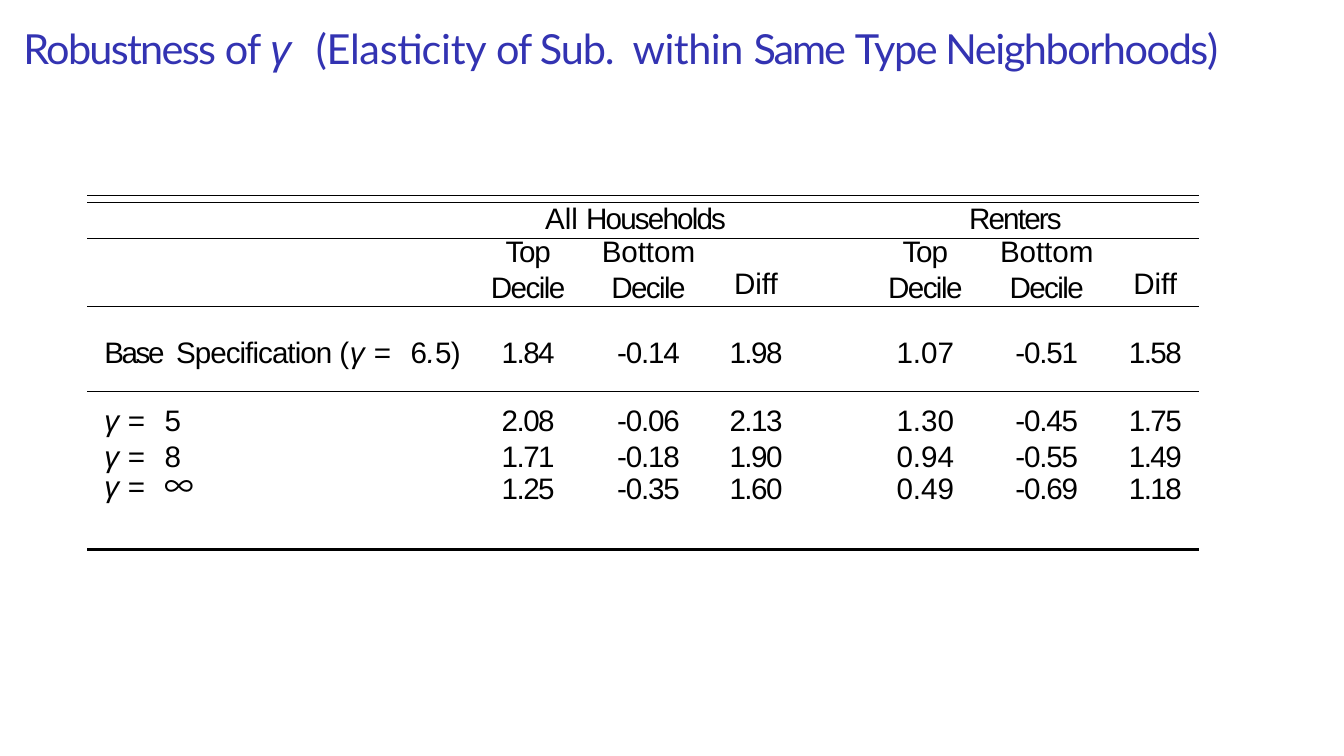
from lxml import etree
from pptx import Presentation
from pptx.dml.color import RGBColor
from pptx.enum.shapes import MSO_CONNECTOR
from pptx.enum.text import PP_ALIGN
from pptx.oxml.ns import qn
from pptx.util import Inches, Pt

STRAIGHT = MSO_CONNECTOR.STRAIGHT
CENTER, LEFT = PP_ALIGN.CENTER, PP_ALIGN.LEFT
BLACK = RGBColor(0, 0, 0)
TITLE_BLUE = RGBColor(0x33, 0x33, 0xB2)


def add_runs(paragraph, runs, size, color):
    for words, font_name, spacing, italic in runs:
        run = paragraph.add_run()
        run.text = words
        formats = {"name": font_name, "size": Pt(size), "italic": italic, "bold": False}
        for attribute, value in formats.items():
            setattr(run.font, attribute, value)
        run.font.color.rgb = color
        run.font._element.set("spc", str(round(spacing * 100)))


def add_heading(left, top, width, height, inset, runs, size, color):
    frame = slide.shapes.add_textbox(
        Inches(left), Inches(top), Inches(width), Inches(height)
    ).text_frame
    formats = {"margin_left": Inches(0.01), "margin_right": 0,
               "margin_top": Inches(inset), "margin_bottom": 0, "word_wrap": False}
    for attribute, value in formats.items():
        setattr(frame, attribute, value)
    add_runs(frame.paragraphs[0], runs, size, color)


deck = Presentation()
deck.slide_width, deck.slide_height = Inches(6.31), Inches(3.55)
slide = deck.slides.add_slide(deck.slide_layouts[6])

title = [
    ("Robustness ", "Lato", -0.6, False),
    ("of ", "Lato", -0.4, False),
    ("γ", "Arial", 0.2, True),
    (" ", "Arial", 4.3, True),
    ("(Elasticity ", "Lato", -0.1, False),
    ("of Sub.", "Lato", -0.4, False),
    (" ", "Lato", 2.4, False),
    ("within ", "Lato", -0.2, False),
    ("Same ", "Lato", -0.7, False),
    ("Type Neighborhoods)", "Lato", -0.5, False),
]
add_heading(0.1, 0.08, 5.76, 0.27, 0.03, title, 14, TITLE_BLUE)

for rule_top in (0.92, 0.95):
    rule = slide.shapes.add_connector(
        STRAIGHT, Inches(0.41), Inches(rule_top), Inches(5.63), Inches(rule_top))
    rule.line.color.rgb = BLACK
    rule.line.width = Pt(0.4)
    etree.SubElement(rule._element.spPr, qn("a:effectLst"))

all_households = [("All ", "Arial", 0, False), ("Households", "Arial", -0.6, False)]
renters = [("Renters", "Arial", -0.6, False)]
for left, width, group in ((2.55, 0.88, all_households), (4.54, 0.46, renters)):
    add_heading(left, 0.92, width, 0.19, 0.02, group, 10, BLACK)

base_label = [
    ("Base", "Arial", -0.8, False),
    (" ", "Arial", 1.2, False),
    ("Specification ", "Arial", -0.3, False),
    ("(", "Arial", 0.2, False),
    ("γ ", "Arial", 0.2, True),
    ("= ", "Arial", 1.9, False),
    ("6", "Arial", -0.2, False),
    (".", "Arial", -0.2, True),
    ("5)", "Arial", -0.2, False),
]
gamma_labels = [
    [("γ ", "Arial", 0.1, True), ("= ", "Arial", 1.9, False), (value, font, spacing, False)]
    for value, font, spacing in (
        ("5", "Arial", -0.6), ("8", "Arial", -0.6), ("∞", "Noto Sans CJK JP", -0.1))
]
row_labels = [None, base_label] + gamma_labels
header_group = ["Top\nDecile", "Bottom\nDecile", "Diff"]
columns = [
    header_group * 2,
    ["1.84", "-0.14", "1.98", "1.07", "-0.51", "1.58"],
    ["2.08", "-0.06", "2.13", "1.30", "-0.45", "1.75"],
    ["1.71", "-0.18", "1.90", "0.94", "-0.55", "1.49"],
    ["1.25", "-0.35", "1.60", "0.49", "-0.69", "1.18"],
]
column_widths = [1.81, 0.52, 0.61, 0.58, 0.68, 0.61, 0.41]
row_heights = [0.32, 0.4, 0.24, 0.15, 0.35]
top_insets = [0, 0.14, 0.06, 0, 0]
line_pitches = {3: [10.5], 4: [10.6]}
left_insets = {0: 0.08, 4: 0.15}
right_insets = {3: 0.18}
header_spacing = {"Top": -0.4, "Decile": -0.5}
rules_above = {0: 0.5, 1: 0.5, 2: 0.5, 5: 1}

results = slide.shapes.add_table(
    len(row_heights), len(column_widths), Inches(0.41), Inches(1.12),
    Inches(sum(column_widths)), Inches(sum(row_heights))).table
for flag in ("first_row", "horz_banding"):
    setattr(results, flag, False)
for column, width in zip(results.columns, column_widths):
    column.width = Inches(width)
for row, height in zip(results.rows, row_heights):
    row.height = Inches(height)

for r, values in enumerate(columns):
    for c in range(len(column_widths)):
        cell = results.cell(r, c)
        if c == 0:
            lines = [row_labels[r]] if row_labels[r] else []
        else:
            lines = []
            for words in values[c - 1].split("\n"):
                spacing = -0.4 if words.startswith("-") else -0.5
                if r == 0:
                    spacing = header_spacing.get(words, 0)
                elif c == 4:
                    spacing = 0
                lines.append([(words, "Arial", spacing, False)])
        pitches = [10.3, 12] if len(lines) == 2 else line_pitches.get(r, [None])
        top_inset = 0.14 if r == 0 and len(lines) == 1 else top_insets[r]
        margins = {"margin_left": left_insets.get(c, 0), "margin_right": right_insets.get(c, 0),
                   "margin_top": top_inset, "margin_bottom": 0}
        for attribute, value in margins.items():
            setattr(cell, attribute, Inches(value))
        for i, (runs, pitch) in enumerate(zip(lines, pitches)):
            frame = cell.text_frame
            paragraph = frame.add_paragraph() if i else frame.paragraphs[0]
            paragraph.alignment = CENTER if c else LEFT
            if pitch:
                paragraph.line_spacing = Pt(pitch)
            add_runs(paragraph, runs, 10, BLACK)
        cell.fill.background()
        borders = {"a:lnL": None, "a:lnR": None,
                   "a:lnT": rules_above.get(r), "a:lnB": rules_above.get(r + 1)}
        for position, (edge, thickness) in enumerate(borders.items()):
            border = etree.Element(qn(edge))
            if thickness:
                border.set("w", str(Pt(thickness)))
                ink = etree.SubElement(border, qn("a:solidFill"))
                etree.SubElement(ink, qn("a:srgbClr")).set("val", str(BLACK))
            else:
                etree.SubElement(border, qn("a:noFill"))
            cell._tc.get_or_add_tcPr().insert(position, border)

deck.save("out.pptx")
